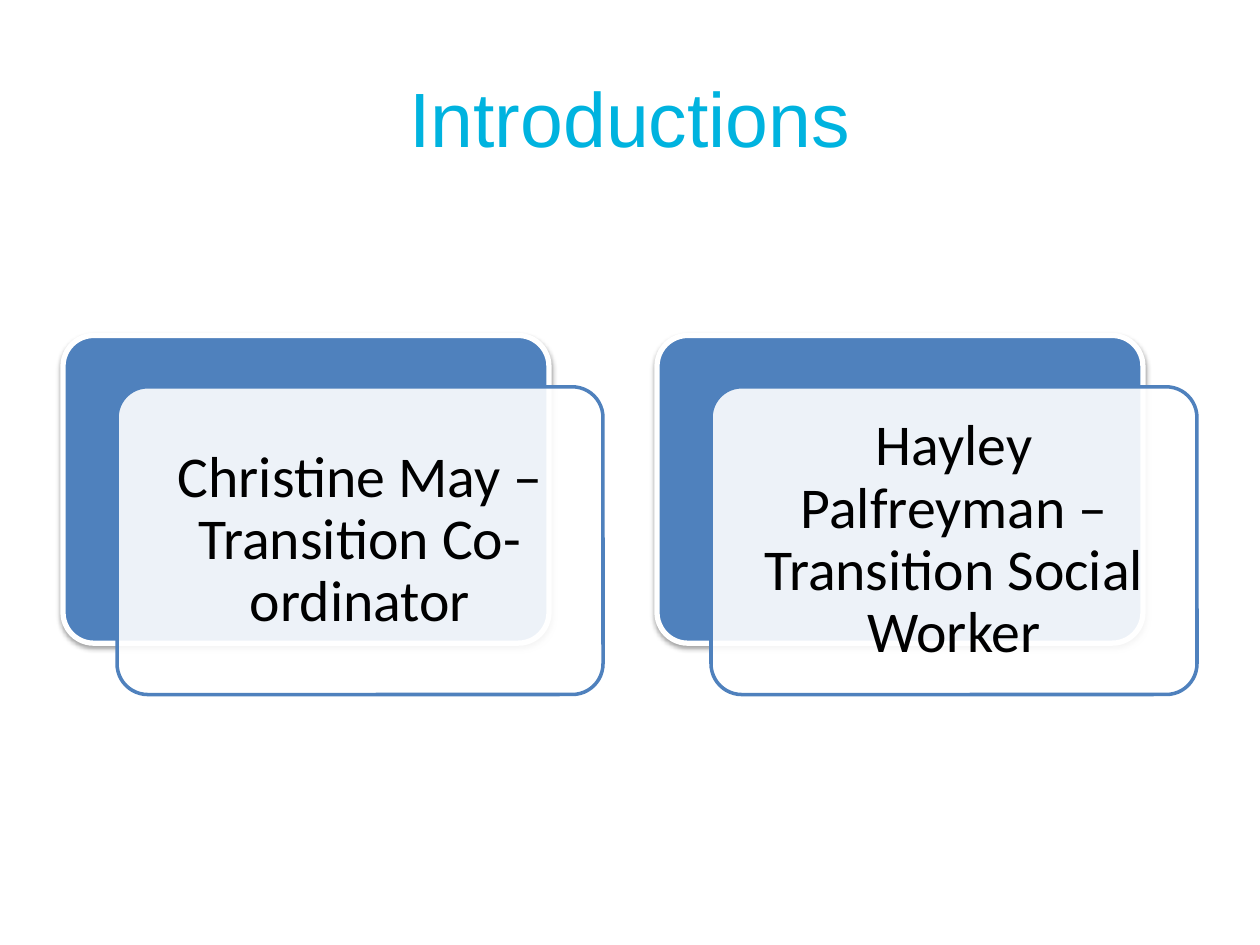
from lxml.etree import SubElement
from pptx import Presentation
from pptx.dml.color import RGBColor
from pptx.enum.shapes import MSO_SHAPE
from pptx.enum.text import MSO_ANCHOR, PP_ALIGN
from pptx.oxml.ns import qn
from pptx.util import Inches, Pt

SLIDE_W, SLIDE_H = 10, 7.5
MARGIN = 0.05 * SLIDE_W
CYAN = RGBColor(0x00, 0xB3, 0xDF)
BLUE = RGBColor(0x4F, 0x81, 0xBD)
WHITE = RGBColor(0xFF, 0xFF, 0xFF)
BLACK = RGBColor(0x00, 0x00, 0x00)
PEOPLE = [
    "Christine May – Transition Co-ordinator",
    "Hayley Palfreyman – Transition Social Worker",
]


def add_label(slide, box, words, font_name, size, color, inset):
    label = slide.shapes.add_textbox(*map(Inches, box))
    frame = label.text_frame
    frame.word_wrap = True
    frame.vertical_anchor = MSO_ANCHOR.MIDDLE
    frame.margin_left = frame.margin_right = Inches(inset)
    frame.margin_top = frame.margin_bottom = Inches(inset)
    frame.text = words
    paragraph = frame.paragraphs[0]
    paragraph.alignment = PP_ALIGN.CENTER
    font = paragraph.runs[0].font
    font.name, font.size, font.color.rgb = font_name, Pt(size), color
    return paragraph


def add_panel(slide, box, fill, outline, outline_width):
    panel = slide.shapes.add_shape(MSO_SHAPE.ROUNDED_RECTANGLE, *map(Inches, box))
    panel.adjustments[0] = 0.1
    panel.shadow.inherit = False
    panel.fill.solid()
    panel.fill.fore_color.rgb = fill
    panel.line.color.rgb = outline
    panel.line.width = Pt(outline_width)
    return panel


def add_soft_shadow(panel):
    effects = panel.element.spPr.find(qn("a:effectLst"))
    shadow = SubElement(effects, qn("a:outerShdw"), blurRad=str(Pt(3.1)),
                        dist=str(Pt(1.6)), dir="5400000", rotWithShape="0")
    color = SubElement(shadow, qn("a:srgbClr"), val=str(BLACK))
    SubElement(color, qn("a:alpha"), val="38000")


def set_opacity(panel, percent):
    color = panel.element.spPr.find(qn("a:solidFill")).find(qn("a:srgbClr"))
    SubElement(color, qn("a:alpha"), val=str(percent * 1000))


def add_title(slide, box):
    add_label(slide, box, "Introductions", "Arial", 44, CYAN, 0.05)


def add_person_card(slide, box, person):
    left, top, width, height = box
    panel_w, panel_h = 0.9 * width, 0.857 * height
    front_left, front_top = left + width - panel_w, top + height - panel_h
    back = add_panel(slide, (left, top, panel_w, panel_h), BLUE, WHITE, 3)
    add_soft_shadow(back)
    front = add_panel(slide, (front_left, front_top, panel_w, panel_h), WHITE, BLUE, 2)
    set_opacity(front, 90)
    inset = 0.03 * panel_h
    text_box = (front_left + inset, front_top + inset,
                panel_w - 2 * inset, panel_h - 2 * inset)
    paragraph = add_label(slide, text_box, person, "Calibri", 33, BLACK, 0.14)
    paragraph.line_spacing = 0.9


def add_people(slide, box):
    left, top, width, height = box
    card_w = width / 2.1
    pitch = (width - card_w) / (len(PEOPLE) - 1)
    for column, person in enumerate(PEOPLE):
        add_person_card(slide, (left + column * pitch, top, card_w, height), person)


def main():
    deck = Presentation()
    deck.slide_width, deck.slide_height = Inches(SLIDE_W), Inches(SLIDE_H)
    slide = deck.slides.add_slide(deck.slide_layouts[6])
    content_w = SLIDE_W - 2 * MARGIN
    add_title(slide, (MARGIN, 0.04 * SLIDE_H, content_w, SLIDE_H / 6))
    add_people(slide, (MARGIN, 0.355 * SLIDE_H, content_w, 0.38 * SLIDE_H))
    deck.save("out.pptx")


if __name__ == "__main__":
    main()
